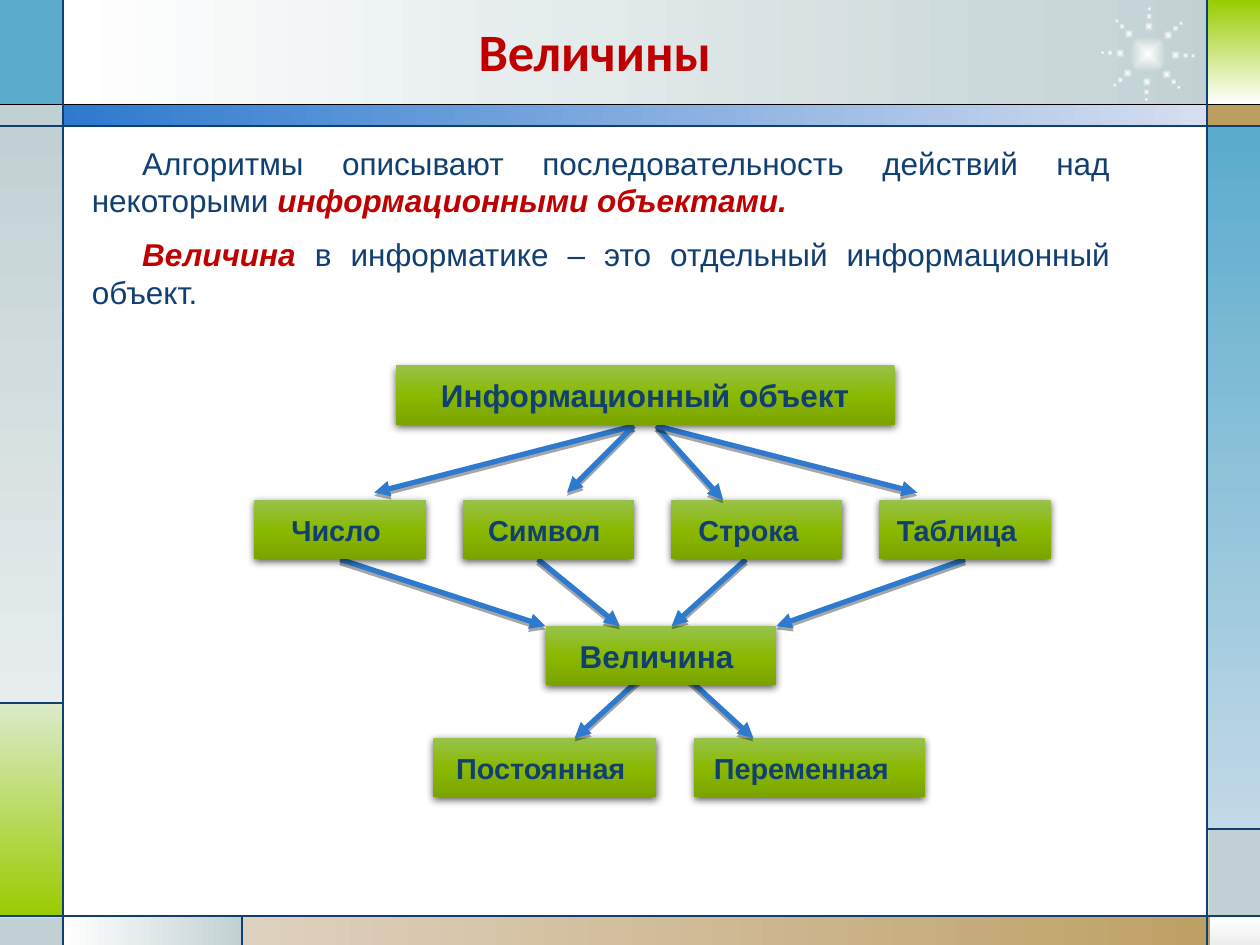
from math import cos, radians, sin
from typing import NamedTuple

from pptx import Presentation
from pptx import oxml
from pptx.dml.color import RGBColor
from pptx.enum import shapes, text
from pptx.oxml import ns
from pptx.util import Inches, Pt

BLUE = RGBColor(0x2D, 0x7A, 0xCF)
NAVY = RGBColor(0x11, 0x3F, 0x71)
RED = RGBColor(0xC0, 0x00, 0x00)
BLACK = RGBColor(0x00, 0x00, 0x00)
WHITE = RGBColor(0xFF, 0xFF, 0xFF)
SILVER = RGBColor(0xC1, 0xD1, 0xD3)
PALE_SILVER = RGBColor(0xE7, 0xED, 0xEE)
PALE_GRAY = RGBColor(0xED, 0xED, 0xED)
SKY = RGBColor(0x5A, 0xAB, 0xCC)
PALE_SKY = RGBColor(0xC2, 0xD9, 0xE7)
PALE_BLUE = RGBColor(0xD7, 0xDE, 0xF0)
LIME = RGBColor(0x99, 0xCC, 0x00)
PALE_LIME = RGBColor(0xDB, 0xEB, 0xC9)
TAN = RGBColor(0xBD, 0x9E, 0x61)
PALE_TAN = RGBColor(0xDE, 0xD1, 0xBF)
BOX_GREENS = (RGBColor(0x97, 0xC2, 0x4B), RGBColor(0x8A, 0xB9, 0x00),
              RGBColor(0x7B, 0xA4, 0x00))

BOX_HEIGHT = 0.47
SPACE_WIDTH = 0.064


class Panel(NamedTuple):
    left: float
    top: float
    width: float
    height: float
    colors: tuple
    angle: int = 90


class Box(NamedTuple):
    label: str
    left: float
    top: float
    width: float
    size: float = 16.5
    pad: int = 0  # extra right inset, in widths of a space


class Line(NamedTuple):
    x1: float
    y1: float
    x2: float
    y2: float


PANELS = [
    Panel(0.5, 0, 9.27, 0.84, (WHITE, SILVER), 0),
    Panel(0, 0, 0.5, 0.84, (SKY,)),
    Panel(0, 0.83, 0.5, 0.17, (SILVER,)),
    Panel(0, 1, 0.5, 4.58, (SILVER, PALE_SILVER)),
    Panel(0, 5.58, 0.5, 1.69, (PALE_LIME, LIME)),
    Panel(0, 7.28, 0.5, 0.22, (SILVER,)),
    Panel(0.5, 7.27, 1.43, 0.23, (WHITE, SILVER), 0),
    Panel(1.92, 7.27, 8.08, 0.23, (PALE_TAN, TAN), 0),
    Panel(9.6, 7.28, 0.4, 0.22, (WHITE, PALE_GRAY)),
    Panel(9.59, 6.58, 0.41, 0.7, (SILVER,)),
    Panel(9.58, 1, 0.42, 5.58, (SKY, PALE_SKY)),
    Panel(9.58, 0.83, 0.42, 0.17, (TAN,)),
    Panel(9.59, 0, 0.41, 0.83, (LIME, WHITE)),
    Panel(0.5, 0.83, 9.09, 0.17, (BLUE, PALE_BLUE), 0),
]
RULES = [
    Line(0, 1, 10, 1), Line(0, 7.27, 10, 7.27),
    Line(0.5, 0, 0.5, 7.5), Line(9.58, 0, 9.58, 7.5),
    Line(0, 5.58, 0.5, 5.58), Line(1.92, 7.27, 1.92, 7.5),
    Line(9.58, 6.58, 10, 6.58),
]
ROOT = Box("Информационный объект", 3.14, 2.9, 3.96, 18)
KINDS = [Box(label, 2.02 + 1.653 * i, 3.97, 1.36, pad=pad) for i, (label, pad) in
         enumerate([("Число", 1), ("Символ", 1), ("Строка", 2), ("Таблица", 2)])]
VALUE = Box("Величина", 4.33, 4.97, 1.83, 18, 1)
VALUE_TYPES = [Box("Постоянная", 3.44, 5.86, 1.77, pad=1),
               Box("Переменная", 5.51, 5.86, 1.83, pad=2)]
TO_KINDS = [Line(5.03, 3.38, 2.97, 3.91), Line(5.03, 3.38, 4.5, 3.91),
            Line(5.21, 3.38, 5.74, 3.97), Line(5.21, 3.38, 7.28, 3.91)]
TO_VALUE = [Line(2.7, 4.44, 4.33, 4.97), Line(4.27, 4.44, 4.92, 4.97),
            Line(5.92, 4.44, 5.33, 4.97), Line(7.66, 4.44, 6.16, 4.97)]
TO_TYPES = [Line(5.15, 5.32, 4.56, 5.86), Line(5.39, 5.32, 5.98, 5.86)]


def paint(s, colors: tuple, angle: int = 90, radial: bool = False) -> None:
    """Fill with one colour or an even gradient, without an outline."""
    s.shadow.inherit = False
    s.line.fill.background()
    if len(colors) == 1:
        s.fill.solid()
        s.fill.fore_color.rgb = colors[0]
        return
    stops = "".join(
        f'<a:gs pos="{100000 * i // (len(colors) - 1)}"><a:srgbClr val="{c}"/></a:gs>'
        for i, c in enumerate(colors))
    course = ('<a:path path="shape"><a:fillToRect l="50000" t="50000" r="50000" '
              'b="50000"/></a:path>' if radial
              else f'<a:lin ang="{angle * 60000}" scaled="0"/>')
    s.fill.background()
    spPr = s._element.spPr
    spPr.replace(spPr.find(ns.qn("a:noFill")), oxml.parse_xml(
        f'<a:gradFill {ns.nsdecls("a")} rotWithShape="1"><a:gsLst>{stops}</a:gsLst>'
        f'{course}</a:gradFill>'))


def set_effects(s, alpha: int = 0, blur: float = 0, dist: float = 0) -> None:
    """Give a downward shadow, or none when alpha is zero."""
    spPr = s._element.spPr
    for old in spPr.findall(ns.qn("a:effectLst")):
        spPr.remove(old)
    shadow = (f'<a:outerShdw blurRad="{Pt(blur)}" dist="{Pt(dist)}" dir="5400000" '
              f'rotWithShape="0"><a:srgbClr val="000000"><a:alpha val="{alpha * 1000}"/>'
              '</a:srgbClr></a:outerShdw>' if alpha else "")
    spPr.append(oxml.parse_xml(
        f'<a:effectLst {ns.nsdecls("a")}>{shadow}</a:effectLst>'))


def add_panel(slide, panel: Panel) -> None:
    s = slide.shapes.add_shape(shapes.MSO_SHAPE.RECTANGLE,
                               *(Inches(v) for v in panel[:4]))
    paint(s, panel.colors, panel.angle)


def add_dot(slide, x: float, y: float, size: float) -> None:
    s = slide.shapes.add_shape(shapes.MSO_SHAPE.OVAL, Inches(x - size / 2),
                               Inches(y - size / 2), Inches(size), Inches(size))
    paint(s, (WHITE, SILVER), radial=True)


def add_line(slide, line: Line, color: RGBColor, width: float):
    s = slide.shapes.add_connector(shapes.MSO_CONNECTOR.STRAIGHT,
                                   *(Inches(v) for v in line))
    s.line.color.rgb = color
    s.line.width = Pt(width)
    set_effects(s)
    return s


def add_arrow(slide, line: Line):
    s = add_line(slide, line, BLUE, 3)
    s.line._get_or_add_ln().append(
        oxml.parse_xml(f'<a:tailEnd {ns.nsdecls("a")} type="triangle"/>'))
    set_effects(s, 35, 0, 1.8)
    return s


def set_font(font, size: float, color: RGBColor, name: str = "Arial") -> None:
    font.name, font.size, font.bold = name, Pt(size), True
    font.color.rgb = color


def add_box(slide, box: Box):
    s = slide.shapes.add_shape(shapes.MSO_SHAPE.RECTANGLE, Inches(box.left),
                               Inches(box.top), Inches(box.width), Inches(BOX_HEIGHT))
    paint(s, BOX_GREENS)
    set_effects(s, 63, 4.5, 1.5)
    tf = s.text_frame
    tf.word_wrap = False
    tf.vertical_anchor = text.MSO_ANCHOR.MIDDLE
    tf.margin_right = Inches(0.1 + box.pad * SPACE_WIDTH)
    p = tf.paragraphs[0]
    p.text = box.label
    p.alignment = text.PP_ALIGN.CENTER
    set_font(p.font, box.size, NAVY)
    return s


def add_text(slide, left: float, top: float, width: float, height: float):
    tf = slide.shapes.add_textbox(Inches(left), Inches(top), Inches(width),
                                  Inches(height)).text_frame
    tf.word_wrap = True
    return tf


def main() -> None:
    prs = Presentation()
    prs.slide_width, prs.slide_height = Inches(10), Inches(7.5)
    slide = prs.slides.add_slide(prs.slide_layouts[6])

    # Frame of coloured panels
    for panel in PANELS:
        add_panel(slide, panel)

    # Starburst of eight rays
    add_dot(slide, 9.11, 0.43, 0.3)
    for ray in range(8):
        angle = radians(45 * ray + 2)
        for radius, size in ((0.3, 0.05), (0.36, 0.035), (0.22, 0.075)):
            add_dot(slide, 9.11 + radius * cos(angle), 0.43 + radius * sin(angle), size)

    # Frame rules
    add_line(slide, Line(0, 0.83, 10, 0.83), BLACK, 0.75)
    for rule in RULES:
        add_line(slide, rule, NAVY, 0.75)

    # Title
    tf = add_text(slide, 3.7, 0.24, 6.56, 0.41)
    tf.vertical_anchor = text.MSO_ANCHOR.MIDDLE
    p = tf.paragraphs[0]
    p.text = "Величины"
    p.line_spacing = 0.8
    set_font(p.font, 30, RED, "Calibri")

    # Definitions: each run is a text and whether it is a key term
    definitions = [
        [("Алгоритмы описывают последовательность действий над некоторыми ", False),
         ("информационными объектами.", True)],
        [("Величина", True),
         (" в информатике – это отдельный информационный объект.", False)],
    ]
    tf = add_text(slide, 0.63, 1.09, 8.28, 1.92)
    for i, runs in enumerate(definitions):
        p = tf.add_paragraph() if i else tf.paragraphs[0]
        p.alignment = text.PP_ALIGN.JUSTIFY
        p._p.get_or_add_pPr().set("indent", str(Inches(0.4)))
        if i:
            p.space_before = Pt(9)
        p.font.name, p.font.size = "Arial", Pt(18)
        for words, is_term in runs:
            r = p.add_run()
            r.text = words
            r.font.bold = r.font.italic = is_term
            r.font.color.rgb = RED if is_term else NAVY

    # Diagram, from the lowest level up so that boxes cover arrow starts
    for box in VALUE_TYPES:
        add_box(slide, box)
    for line in TO_TYPES:
        add_arrow(slide, line)
    add_box(slide, VALUE)
    value_arrows = [add_arrow(slide, line) for line in TO_VALUE]
    kind_boxes = [add_box(slide, box) for box in KINDS]
    for i in (0, 3):
        value_arrows[i].begin_connect(kind_boxes[i], 2)
    for line in TO_KINDS:
        add_arrow(slide, line)
    add_box(slide, ROOT)

    prs.save("out.pptx")


if __name__ == "__main__":
    main()
